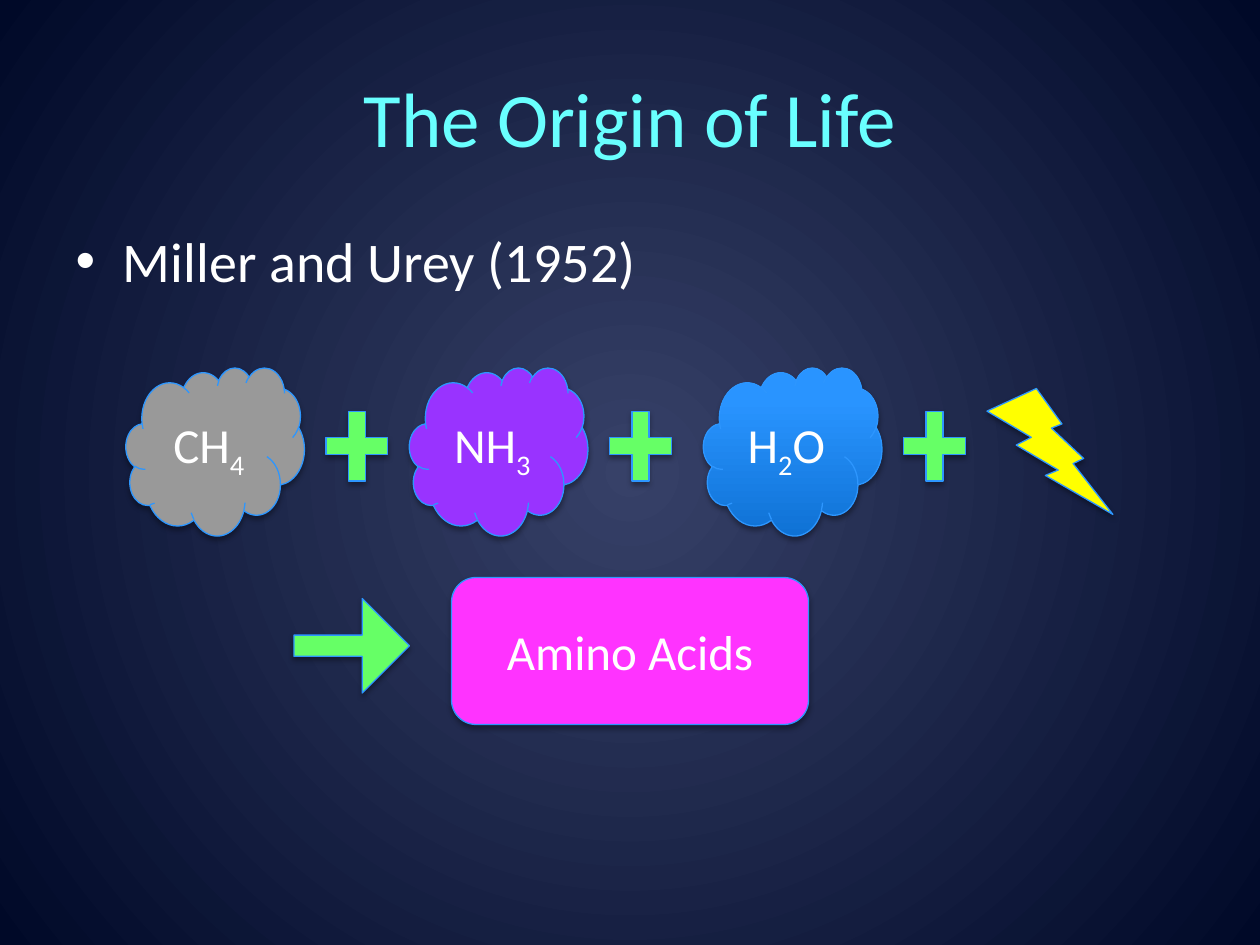
"""Build the Origin of Life slide on a grid of 120 columns by 90 rows."""
import pptx
import pptx.dml.color
import pptx.enum.shapes
import pptx.enum.text
import pptx.oxml
import pptx.oxml.ns
import pptx.util

COLORS = {
    "glow": "374168", "night": "000928", "title": "69FFFF", "text": "FFFFFF",
    "edge": "2D96FE", "methane": "999999", "ammonia": "9933FF", "green": "66FF66",
    "bolt": "FFFF00", "amino": "FF33FF", "deep": "0F72D5", "water": "2994FF",
    "light": "2B95FF",
}
SHAPES = pptx.enum.shapes.MSO_SHAPE
ALIGN = pptx.enum.text.PP_ALIGN


def rgb(name):
    return pptx.dml.color.RGBColor.from_string(COLORS[name])


def element(xml):
    return pptx.oxml.parse_xml(xml.replace(" ", f" {pptx.oxml.ns.nsdecls('a')} ", 1))


class Slide:
    """Hold the style and the current slide."""

    font = "Calibri"
    columns, rows = 120, 90

    def __init__(self, deck):
        self.deck = deck
        self.page = deck.slides.add_slide(deck.slide_layouts[1])

    def place(self, column, row, width, height):
        across = self.deck.slide_width / self.columns
        down = self.deck.slide_height / self.rows
        return [round(n) for n in (column * across, row * down, width * across, height * down)]

    def gradient(self, fill, owner, stops, direction):
        fill.gradient()
        grad = owner.find(".//" + pptx.oxml.ns.qn("a:gradFill"))
        for child in list(grad):
            grad.remove(child)
        marks = "".join(
            f'<a:gs pos="{share * 1000}"><a:srgbClr val="{COLORS[name]}"/></a:gs>'
            for share, name in stops)
        grad.append(element(f'<a:gsLst >{marks}</a:gsLst>'))
        grad.append(element(direction))

    def background(self, stops):
        self.gradient(
            self.page.background.fill, self.page._element, stops,
            '<a:path path="circle"><a:fillToRect l="50000" t="50000" r="50000" b="50000"/></a:path>')

    def label(self, box, spans, size, color, align):
        para = box.text_frame.paragraphs[0]
        para.alignment = align
        para.font.name = self.font
        para.font.size = pptx.util.Pt(size)
        para.font.color.rgb = rgb(color)
        for text in spans:
            span = para.add_run()
            span.text = text
            if text.isdigit():
                span.font._element.set("baseline", "-25000")

    def placeholder(self, index, area, text, size, color, align):
        box = self.page.placeholders[index]
        box.left, box.top, box.width, box.height = self.place(*area)
        self.label(box, [text], size, color, align)

    def shape(self, kind, area, fill, spans=(), adjust=()):
        shape = self.page.shapes.add_shape(kind, *self.place(*area))
        for index, value in enumerate(adjust):
            shape.adjustments[index] = value
        if isinstance(fill, str):
            shape.fill.solid()
            shape.fill.fore_color.rgb = rgb(fill)
        else:
            self.gradient(shape.fill, shape._element, fill, '<a:lin ang="16200000" scaled="0"/>')
        shape.line.color.rgb = rgb("edge")
        shape.line.width = pptx.util.Pt(0.75)
        self.shadow(shape)
        if spans:
            shape.text_frame.vertical_anchor = pptx.enum.text.MSO_ANCHOR.MIDDLE
            self.label(shape, spans, 28, "text", ALIGN.CENTER)

    def shadow(self, shape):
        shape.shadow.inherit = False
        effects = shape._element.spPr.find(pptx.oxml.ns.qn("a:effectLst"))
        blur, distance = pptx.util.Pt(3.1), pptx.util.Pt(1.8)
        effects.append(element(
            f'<a:outerShdw blurRad="{blur}" dist="{distance}" dir="5400000" rotWithShape="0">'
            '<a:srgbClr val="000000"><a:alpha val="35000"/></a:srgbClr></a:outerShdw>'))


def main():
    deck = pptx.Presentation()
    deck.slide_width = pptx.util.Inches(10)
    deck.slide_height = pptx.util.Inches(7.5)
    slide = Slide(deck)
    slide.background([(0, "glow"), (100, "night")])
    slide.placeholder(0, (6, 3.6, 108, 15), "The Origin of Life", 44, "title", ALIGN.CENTER)
    slide.placeholder(1, (6, 21, 108, 59.4), "Miller and Urey (1952)", 32, "text", ALIGN.LEFT)

    water = [(0, "deep"), (80, "water"), (100, "light")]
    gases = [
        (12, "methane", ["CH", "4"]),
        (39, "ammonia", ["NH", "3"]),
        (67, water, ["H", "2", "O"]),
    ]
    for column, fill, formula in gases:
        slide.shape(SHAPES.CLOUD, (column, 35, 17, 16), fill, formula)
        slide.shape(SHAPES.MATH_PLUS, (column + 18, 38, 8, 9), "green", adjust=[0.203])
    slide.shape(SHAPES.LIGHTNING_BOLT, (94, 37, 12, 12), "bolt")
    slide.shape(SHAPES.RIGHT_ARROW, (28, 57, 11, 9), "green", adjust=[0.225, 0.5])
    slide.shape(SHAPES.ROUNDED_RECTANGLE, (43, 55, 34, 14), "amino", ["Amino Acids"])
    deck.save("out.pptx")


if __name__ == "__main__":
    main()
